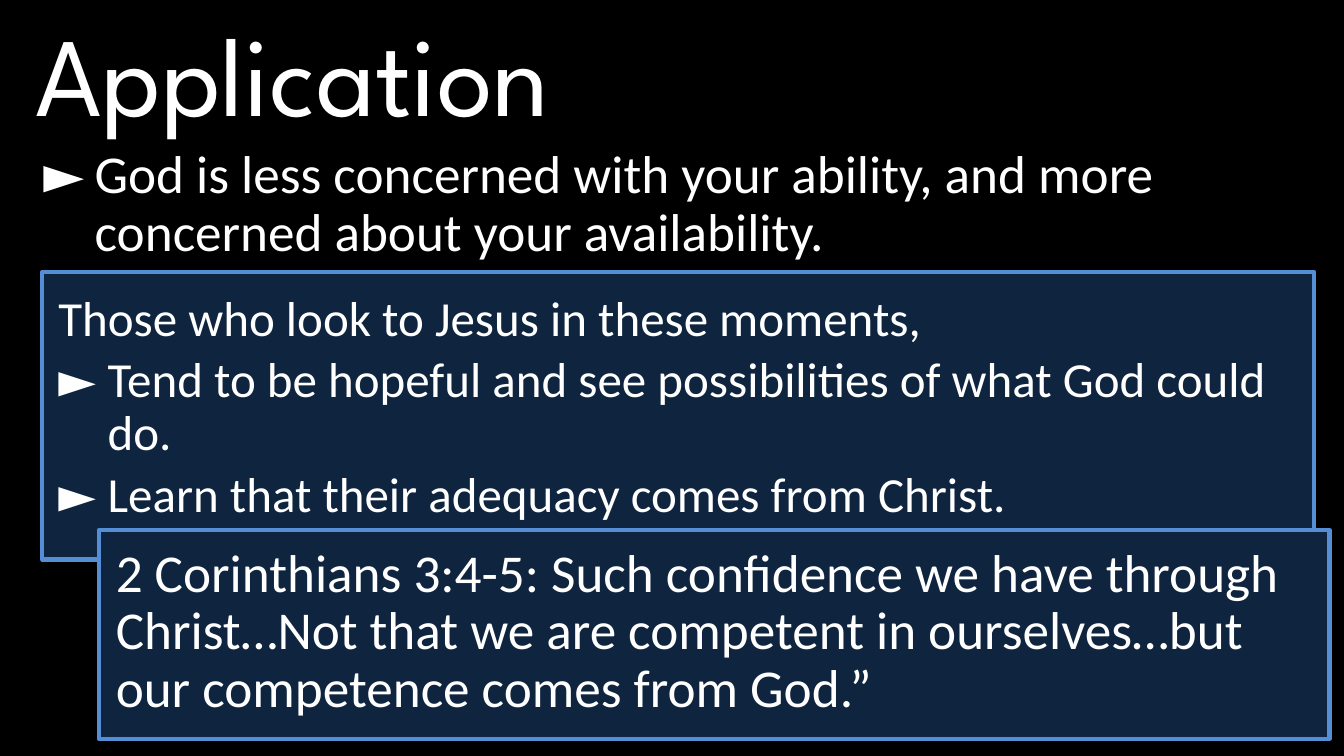
from pptx import Presentation
from pptx.dml.color import RGBColor
from pptx.enum.shapes import MSO_SHAPE as Shape
from pptx.enum.text import MSO_ANCHOR as Anchor, MSO_AUTO_SIZE as Fit, PP_ALIGN as Align
from pptx.util import Pt

WHITE, BLACK, NAVY, BLUE = "FFFFFF", "000000", "0F243E", "558ED5"
MARK = "►\t"

# Panels and texts from back to front; places are left, top, width, height
PARTS = [
    dict(at=(18, 0, 931.7, 104.4), font="League Spartan", size=80,
         lines=["Application"]),
    dict(at=(23.8, 102.2, 908.6, 90), size=38, space=0.9, indent=(36.7, -36.7),
         lines=[MARK + "God is less concerned with your ability, and more "
                "concerned about your availability."]),
    dict(panel=(30.2, 194.4, 908.6, 205.2),
         at=(33.1, 206.6, 900.7, 172.1), size=35, space=0.9, after=6,
         indent=(36.7, -35.3),
         lines=["Those who look to Jesus in these moments,",
                MARK + "Tend to be hopeful and see possibilities of what God could do.",
                MARK + "Learn that their adequacy comes from Christ."]),
    dict(panel=(70.6, 378.7, 879.1, 149),
         at=(74.9, 386.6, 871.9, 131.8), size=38, space=0.9, after=6,
         indent=(0.7, 0),
         lines=["2 Corinthians 3:4-5: Such confidence we have through "
                "Christ…Not that we are competent in ourselves…but our "
                "competence comes from God.”"]),
]


def paint(color, code):
    color.rgb = RGBColor.from_string(code)


def add_panel(slide, place):
    panel = slide.shapes.add_shape(Shape.RECTANGLE, *map(Pt, place))
    panel.shadow.inherit = False
    panel.fill.solid()
    paint(panel.fill.fore_color, NAVY)
    paint(panel.line.color, BLUE)
    panel.line.width = Pt(3)


def add_text(slide, at, lines, size, font="Calibri", space=1.0, after=0, indent=(0, 0)):
    frame = slide.shapes.add_textbox(*map(Pt, at)).text_frame
    frame.word_wrap = True
    frame.auto_size = Fit.SHAPE_TO_FIT_TEXT
    frame.vertical_anchor = Anchor.TOP
    for i, line in enumerate(lines):
        para = frame.add_paragraph() if i else frame.paragraphs[0]
        para.alignment = Align.LEFT
        para.line_spacing = space
        para.space_after = Pt(after)
        props = para._p.get_or_add_pPr()
        for name, value in zip(("marL", "indent"), indent):
            props.set(name, str(int(Pt(value))))
        run = para.add_run()
        run.text = line
        run.font.name = font
        run.font.size = Pt(size)
        paint(run.font.color, WHITE)


def main():
    deck = Presentation()
    deck.slide_width, deck.slide_height = Pt(960), Pt(540)
    slide = deck.slides.add_slide(deck.slide_layouts[6])
    slide.background.fill.solid()
    paint(slide.background.fill.fore_color, BLACK)
    for part in PARTS:
        if "panel" in part:
            add_panel(slide, part["panel"])
        add_text(slide, **{k: v for k, v in part.items() if k != "panel"})
    deck.save("out.pptx")


if __name__ == "__main__":
    main()
